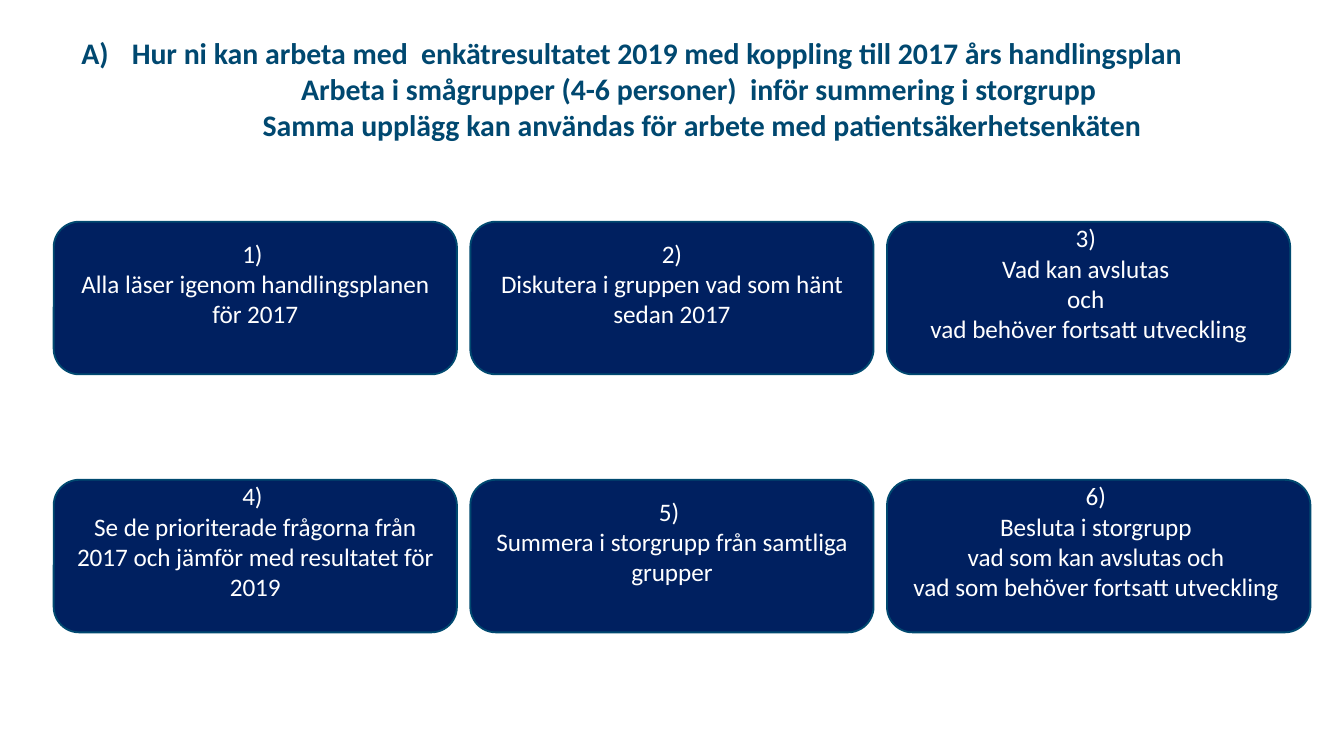
from pptx import Presentation
from pptx.dml.color import RGBColor
from pptx.enum.shapes import MSO_SHAPE
from pptx.enum.text import MSO_ANCHOR, MSO_AUTO_SIZE, PP_ALIGN
from pptx.oxml.ns import qn
from pptx.util import Pt
from lxml import etree

PX = 4572  # 200 px to the inch
TEAL = RGBColor(0x00, 0x48, 0x70)
EDGE = RGBColor(0x00, 0x49, 0x70)
NAVY = RGBColor(0x00, 0x20, 0x60)
WHITE = RGBColor(0xFF, 0xFF, 0xFF)

HEADING = [
    "Hur ni kan arbeta med  enkätresultatet 2019 med koppling till 2017 års handlingsplan",
    "Arbeta i smågrupper (4-6 personer)  inför summering i storgrupp",
    " Samma upplägg kan användas för arbete med patientsäkerhetsenkäten",
]
STEPS = [
    ["1) ", "Alla läser igenom handlingsplanen för 2017"],
    ["2)", "Diskutera i gruppen vad som hänt sedan 2017"],
    ["3) ", "Vad kan avslutas ", "och ", "vad behöver fortsatt utveckling"],
    ["4) ", "Se de prioriterade frågorna från 2017 och jämför med resultatet för 2019"],
    ["5) ", "Summera i storgrupp från samtliga grupper"],
    ["6) ", "Besluta i storgrupp ", "vad som kan avslutas och ",
     "vad som behöver fortsatt utveckling "],
]


def write_lines(frame, lines, size, color, bold=False):
    frame.text = "\n".join(lines)
    frame.word_wrap = True
    for paragraph in frame.paragraphs:
        paragraph.alignment = PP_ALIGN.CENTER
        paragraph.font.name = "Calibri"
        paragraph.font.size = Pt(size)
        paragraph.font.bold = bold
        paragraph.font.color.rgb = color


prs = Presentation()
prs.slide_width, prs.slide_height = 2000 * PX, 1125 * PX
slide = prs.slides.add_slide(prs.slide_layouts[5])

# Heading: lettered first line and two centred lines
heading = slide.shapes.title
heading.left, heading.top = 101 * PX, 42 * PX
heading.width, heading.height = 1878 * PX, 290 * PX
heading.text_frame.vertical_anchor = MSO_ANCHOR.TOP
heading.text_frame.auto_size = MSO_AUTO_SIZE.NONE
write_lines(heading.text_frame, HEADING, 16, TEAL, bold=True)
first_line = heading.text_frame.paragraphs[0]
first_line.alignment = PP_ALIGN.LEFT
lettering = first_line._p.get_or_add_pPr()
lettering.set("marL", str(75 * PX))
lettering.set("indent", str(-75 * PX))
letter = etree.Element(qn("a:buAutoNum"), type="alphaUcParenR")
lettering.find(qn("a:defRPr")).addprevious(letter)

# Six numbered steps in two rows of three, the last one wider
for i, lines in enumerate(STEPS):
    row, column = divmod(i, 3)
    width = 630 if i == 5 else 600
    step = slide.shapes.add_shape(
        MSO_SHAPE.ROUNDED_RECTANGLE,
        (80 + 620 * column) * PX, (330 + 384 * row) * PX, width * PX, 227 * PX)
    step.shadow.inherit = False
    step.fill.solid()
    step.fill.fore_color.rgb = NAVY
    step.line.color.rgb = EDGE
    step.line.width = Pt(1)
    step.text_frame.vertical_anchor = MSO_ANCHOR.MIDDLE
    step.text_frame.margin_bottom = 54 * PX  # lifts the text by half a line
    write_lines(step.text_frame, lines, 13.5, WHITE)

prs.save("out.pptx")
